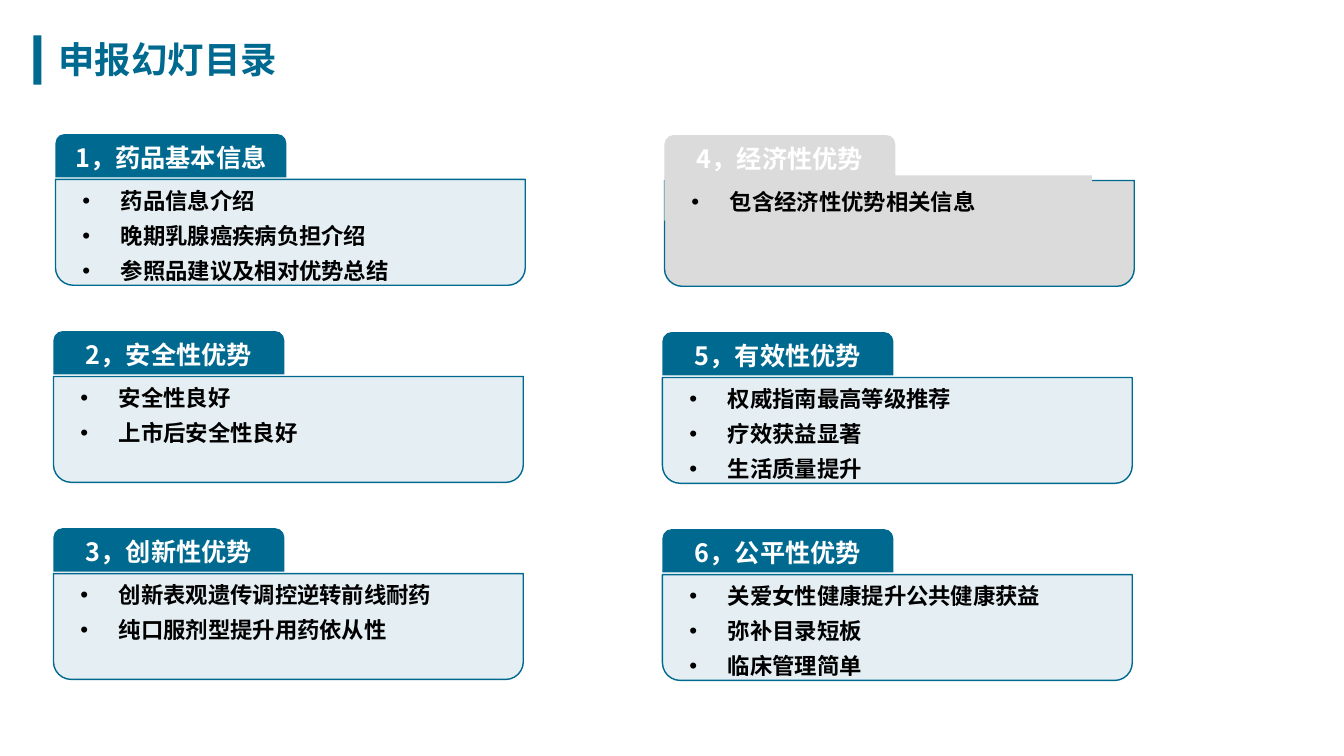
from lxml.etree import SubElement
from pptx import Presentation
from pptx.dml.color import RGBColor
from pptx.enum.shapes import MSO_SHAPE as Preset
from pptx.enum.text import MSO_ANCHOR as Anchor, MSO_AUTO_SIZE as AutoSize, PP_ALIGN as Align
from pptx.oxml.ns import qn
from pptx.util import Inches, Pt

FONT = "Noto Sans CJK SC"
TEAL, GREY, WHITE, BLACK = "00698F", "DBDBDB", "FFFFFF", "000000"
FIRST_LEFT, FIRST_TOP = 0.53, 1.33
COLUMN_PITCH, ROW_PITCH = 6.04, (5.24 - 1.33) / 2
FIRST_ROW_SHIFT, COLUMN_DROP = 0.02, 0.01
TAB_WIDTH, TAB_HEIGHT = 2.29, 0.43
PANEL_WIDTH, PANEL_HEIGHT, PANEL_DROP = 4.66, 1.05, 0.45
LIST_WIDTH, LIST_DROP, LINE_HEIGHT, LIST_PADDING = 4.24, 0.4, 0.35, 0.1

COLUMNS = [
    [
        ("1，药品基本信息", ["药品信息介绍", "晚期乳腺癌疾病负担介绍", "参照品建议及相对优势总结"]),
        ("2，安全性优势", ["安全性良好", "上市后安全性良好"]),
        ("3，创新性优势", ["创新表观遗传调控逆转前线耐药", "纯口服剂型提升用药依从性"]),
    ],
    [
        ("4，经济性优势", ["包含经济性优势相关信息"]),
        ("5，有效性优势", ["权威指南最高等级推荐", "疗效获益显著", "生活质量提升"]),
        ("6，公平性优势", ["关爱女性健康提升公共健康获益", "弥补目录短板", "临床管理简单"]),
    ],
]
INACTIVE = "4，经济性优势"


def rgb(color):
    """Turn a hex string into a colour."""
    return RGBColor.from_string(color)


def set_font(paragraph, size, color):
    """Give a paragraph the bold slide font for Latin and Chinese text."""
    font = paragraph.font
    font.name, font.size, font.bold = FONT, Pt(size), True
    font.color.rgb = rgb(color)
    defaults = paragraph._p.pPr.find(qn("a:defRPr"))
    SubElement(defaults, qn("a:ea"), typeface=FONT)


def add_bullet(paragraph):
    """Give a paragraph a hanging round bullet."""
    properties = paragraph._p.get_or_add_pPr()
    properties.set("marL", str(Inches(0.55)))
    properties.set("indent", str(Inches(-0.38)))
    SubElement(properties, qn("a:buFont"), typeface="Arial")
    SubElement(properties, qn("a:buChar"), char="•")


def add_block(slide, preset, box, fill, opacity=100, line=None):
    """Add a flat filled shape, optionally see-through or outlined."""
    shape = slide.shapes.add_shape(preset, *map(Inches, box))
    shape.shadow.inherit = False
    shape.fill.solid()
    shape.fill.fore_color.rgb = rgb(fill)
    if opacity < 100:
        color = shape._element.spPr.find(qn("a:solidFill")).find(qn("a:srgbClr"))
        SubElement(color, qn("a:alpha"), val=str(opacity * 1000))
    if line:
        shape.line.color.rgb = rgb(line)
        shape.line.width = Pt(1)
    else:
        shape.line.fill.background()
    return shape


def add_title(slide, text):
    """Fill the title placeholder and set its accent bar beside it."""
    title = slide.shapes.title
    title.left, title.top, title.width, title.height = map(Inches, (0.48, 0.32, 2.39, 0.54))
    frame = title.text_frame
    frame.text = text
    frame.word_wrap = False
    frame.auto_size = AutoSize.SHAPE_TO_FIT_TEXT
    frame.vertical_anchor = Anchor.TOP
    paragraph = frame.paragraphs[0]
    paragraph.alignment = Align.LEFT
    set_font(paragraph, 26, TEAL)
    add_block(slide, Preset.RECTANGLE, (0.33, 0.35, 0.08, 0.49), TEAL)


def add_tab(slide, left, top, heading, fill):
    """Add the round-topped heading of a section."""
    box = (left, top, TAB_WIDTH, TAB_HEIGHT)
    tab = add_block(slide, Preset.ROUND_2_SAME_RECTANGLE, box, fill)
    tab.adjustments[0] = 0.21
    frame = tab.text_frame
    frame.text = heading
    frame.vertical_anchor = Anchor.MIDDLE
    paragraph = frame.paragraphs[0]
    paragraph.alignment = Align.CENTER
    set_font(paragraph, 18, WHITE)


def add_list(slide, left, top, items, fill=None):
    """Add the bullet list of a section, on a filled box if asked."""
    box = (left, top, LIST_WIDTH, LIST_PADDING + LINE_HEIGHT * len(items))
    if fill:
        holder = add_block(slide, Preset.RECTANGLE, box, fill)
    else:
        holder = slide.shapes.add_textbox(*map(Inches, box))
    frame = holder.text_frame
    frame.text = "\n".join(items)
    frame.word_wrap = True
    frame.auto_size = AutoSize.SHAPE_TO_FIT_TEXT
    frame.vertical_anchor = Anchor.TOP
    for paragraph in frame.paragraphs:
        paragraph.alignment = Align.LEFT
        paragraph.line_spacing = 1.3
        add_bullet(paragraph)
        set_font(paragraph, 16, BLACK)


def add_section(slide, column, row, heading, items):
    """Place one section of the contents on the grid."""
    left = FIRST_LEFT + COLUMN_PITCH * column + (FIRST_ROW_SHIFT if row == 0 else 0)
    top = FIRST_TOP + ROW_PITCH * row + COLUMN_DROP * column
    inactive = heading == INACTIVE
    fill = GREY if inactive else TEAL
    add_tab(slide, left, top, heading, fill)
    box = (left, top + PANEL_DROP, PANEL_WIDTH, PANEL_HEIGHT)
    panel = add_block(slide, Preset.ROUND_2_SAME_RECTANGLE, box, fill, 100 if inactive else 10, TEAL)
    panel.rotation = 180
    add_list(slide, left, top + LIST_DROP, items, GREY if inactive else None)


def main():
    """Build the contents slide."""
    presentation = Presentation()
    presentation.slide_width, presentation.slide_height = Inches(13.33), Inches(7.5)
    slide = presentation.slides.add_slide(presentation.slide_layouts.get_by_name("Title Only"))
    add_title(slide, "申报幻灯目录")
    for column, sections in enumerate(COLUMNS):
        for row, (heading, items) in enumerate(sections):
            add_section(slide, column, row, heading, items)
    presentation.save("out.pptx")


if __name__ == "__main__":
    main()
